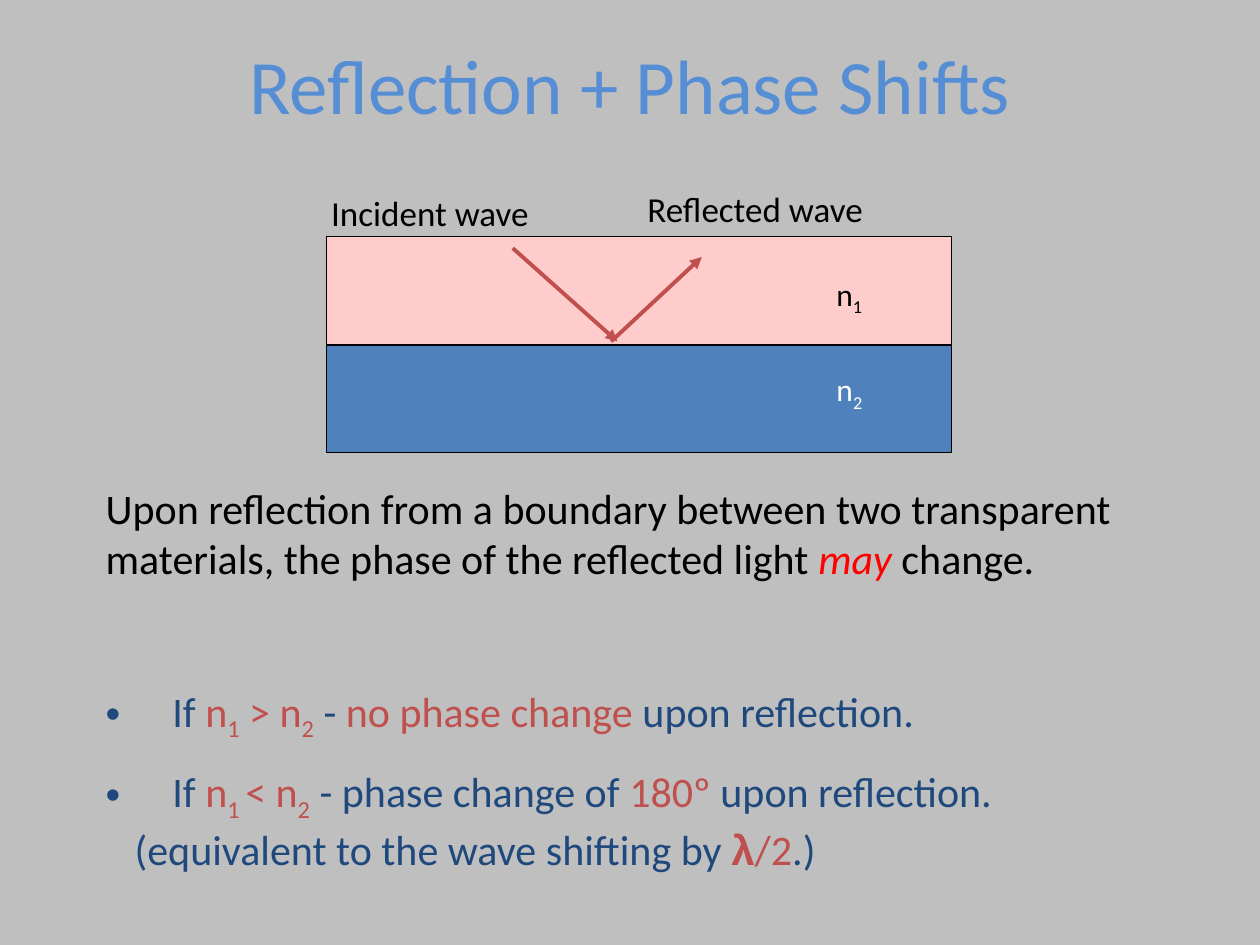
from dataclasses import dataclass

from lxml import etree
from pptx import Presentation
from pptx.dml.color import RGBColor
from pptx.enum.shapes import MSO_CONNECTOR, MSO_SHAPE
from pptx.enum.text import MSO_ANCHOR, PP_ALIGN
from pptx.oxml.ns import qn
from pptx.slide import Slide
from pptx.util import Emu, Pt

RECTANGLE = MSO_SHAPE.RECTANGLE
STRAIGHT = MSO_CONNECTOR.STRAIGHT
TOP, MIDDLE = MSO_ANCHOR.TOP, MSO_ANCHOR.MIDDLE
LEFT, CENTER = PP_ALIGN.LEFT, PP_ALIGN.CENTER
PX = 9144  # EMU in one px, 100 px to the inch


@dataclass(frozen=True)
class Theme:
    background: str = "BFBFBF"
    title: str = "558ED5"
    black: str = "000000"
    white: str = "FFFFFF"
    navy: str = "1F497D"
    accent: str = "C0504D"
    red: str = "FF0000"
    upper_medium: str = "FFCCCC"
    lower_medium: str = "4F81BD"
    font: str = "Calibri"
    greek_font: str = "Arial"
    title_size: int = 44
    body_size: int = 24
    label_size: int = 20
    index_size: int = 18
    outline: float = 0.75
    ray: float = 2.25


THEME = Theme()


@dataclass(frozen=True)
class Span:
    text: str
    color: str
    subscript: bool = False
    italic: bool = False
    bold: bool = False
    font: str = THEME.font


@dataclass(frozen=True)
class Para:
    spans: list[Span]
    margin: int = 0
    bullet: bool = False


@dataclass(frozen=True)
class TextBlock:
    left: int
    top: int
    width: int
    height: int
    size: int
    paras: list[Para]
    align: PP_ALIGN = LEFT
    anchor: MSO_ANCHOR = TOP


@dataclass(frozen=True)
class Medium:
    top: int
    fill: str


@dataclass(frozen=True)
class Ray:
    start: tuple[int, int]
    end: tuple[int, int]


def px(length: int) -> Emu:
    return Emu(length * PX)


def rgb(color: str) -> RGBColor:
    return RGBColor.from_string(color)


def index_spans(number: str, color: str, lead: str = "") -> list[Span]:
    """A refractive index: n with its number as a subscript."""
    return [Span(lead + "n", color), Span(number, color, subscript=True)]


def plain(text: str, color: str) -> list[Para]:
    return [Para([Span(text, color)])]


def add_text(page: Slide, block: TextBlock) -> None:
    box = page.shapes.add_textbox(px(block.left), px(block.top), px(block.width), px(block.height))
    frame = box.text_frame
    frame.word_wrap = True
    frame.vertical_anchor = block.anchor
    for number, item in enumerate(block.paras):
        para = frame.add_paragraph() if number else frame.paragraphs[0]
        para.alignment = block.align
        properties = para._p.get_or_add_pPr()
        properties.set("marL", str(px(item.margin)))
        properties.set("indent", str(px(-item.margin if item.bullet else 0)))
        if item.bullet:
            etree.SubElement(properties, qn("a:buFont"), typeface="Arial")
            etree.SubElement(properties, qn("a:buChar"), char="•")
        for span in item.spans:
            run = para.add_run()
            run.text = span.text
            run.font.name = span.font
            run.font.size = Pt(block.size)
            run.font.color.rgb = rgb(span.color)
            run.font.italic = span.italic
            run.font.bold = span.bold
            if span.subscript:
                run.font._element.set("baseline", "-25000")


def add_medium(page: Slide, medium: Medium) -> None:
    shape = page.shapes.add_shape(RECTANGLE, px(259), px(medium.top), px(496), px(86))
    shape.shadow.inherit = False
    shape.fill.solid()
    shape.fill.fore_color.rgb = rgb(medium.fill)
    shape.line.color.rgb = rgb(THEME.black)
    shape.line.width = Pt(THEME.outline)


def add_ray(page: Slide, ray: Ray) -> None:
    start, end = map(px, ray.start), map(px, ray.end)
    connector = page.shapes.add_connector(STRAIGHT, *start, *end)
    connector.line.color.rgb = rgb(THEME.accent)
    connector.line.width = Pt(THEME.ray)
    etree.SubElement(connector.line._get_or_add_ln(), qn("a:tailEnd"), type="triangle")
    etree.SubElement(connector._element.spPr, qn("a:effectLst"))


MEDIA = [Medium(273, THEME.lower_medium), Medium(188, THEME.upper_medium)]
RAYS = [Ray((407, 197), (490, 271)), Ray((485, 271), (557, 204))]

NO_SHIFT = Para([
    Span("If ", THEME.navy),
    *index_spans("1", THEME.accent),
    *index_spans("2", THEME.accent, " > "),
    Span(" - ", THEME.navy),
    Span("no phase change", THEME.accent),
    Span(" upon reflection.", THEME.navy),
], margin=53, bullet=True)
HALF_TURN = Para([
    Span("If ", THEME.navy),
    *index_spans("1 ", THEME.accent),
    *index_spans("2", THEME.accent, "< "),
    Span(" - phase change of ", THEME.navy),
    Span("180º", THEME.accent),
    Span(" upon reflection.", THEME.navy),
], margin=53, bullet=True)
EQUIVALENT = Para([
    Span("(equivalent to the wave shifting by ", THEME.navy),
    Span("λ", THEME.accent, bold=True, font=THEME.greek_font),
    Span("/2", THEME.accent),
    Span(".)", THEME.navy),
], margin=23)
STATEMENT = Para([
    Span("Upon reflection from a boundary between two transparent materials, "
         "the phase of the reflected light ", THEME.black),
    Span("may", THEME.red, italic=True),
    Span(" change.", THEME.black),
])

TEXTS = [
    TextBlock(75, 4, 850, 125, THEME.title_size,
              plain("Reflection + Phase Shifts", THEME.title), CENTER, MIDDLE),
    TextBlock(654, 213, 56, 50, THEME.index_size, [Para(index_spans("1", THEME.black))]),
    TextBlock(654, 289, 101, 50, THEME.index_size, [Para(index_spans("2", THEME.white))]),
    TextBlock(74, 378, 888, 91, THEME.body_size, [STATEMENT]),
    TextBlock(74, 539, 894, 51, THEME.body_size, [NO_SHIFT]),
    TextBlock(74, 603, 871, 91, THEME.body_size, [HALF_TURN, EQUIVALENT]),
    TextBlock(253, 147, 219, 43, THEME.label_size, plain("Incident wave", THEME.black)),
    TextBlock(504, 144, 246, 43, THEME.label_size, plain("Reflected wave", THEME.black)),
]


def main() -> None:
    deck = Presentation()
    deck.slide_width, deck.slide_height = px(1000), px(750)
    page = deck.slides.add_slide(deck.slide_layouts[6])
    page.background.fill.solid()
    page.background.fill.fore_color.rgb = rgb(THEME.background)
    for medium in MEDIA:
        add_medium(page, medium)
    for block in TEXTS:
        add_text(page, block)
    for ray in RAYS:
        add_ray(page, ray)
    deck.save("out.pptx")


if __name__ == "__main__":
    main()
